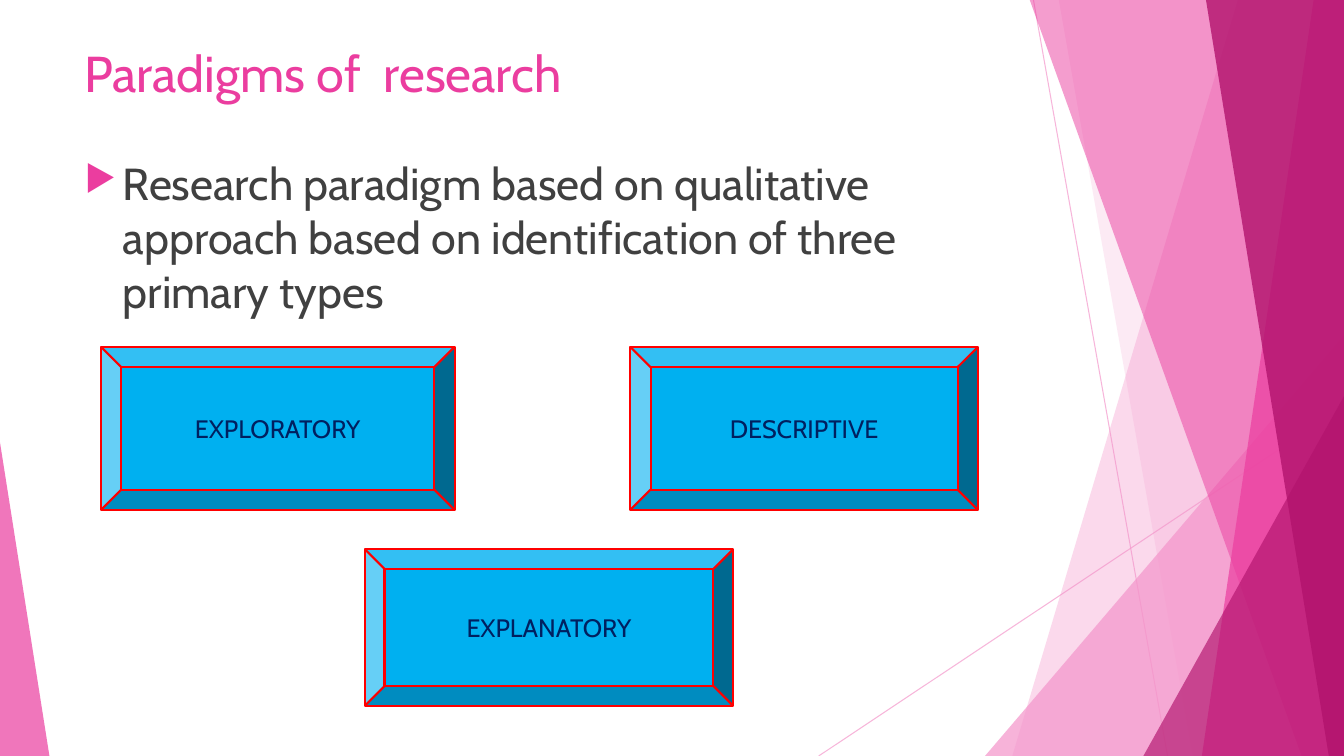
"""Build a slide on the three paradigms of research."""
from dataclasses import dataclass

from lxml.etree import SubElement as Sub
from pptx import Presentation
from pptx.dml.color import RGBColor
from pptx.enum.shapes import MSO_CONNECTOR as Link, MSO_SHAPE as Kind
from pptx.enum.text import MSO_ANCHOR as Anchor, PP_ALIGN as Align
from pptx.oxml.ns import qn
from pptx.util import Inches, Pt

WIDE, HIGH, TOP = 13.33, 7.5, -0.01
ROSE = RGBColor(0xF4, 0x96, 0xCB)
PINK = RGBColor(0xEB, 0x3D, 0x9F)
PLUM = RGBColor(0xB2, 0x13, 0x6D)
GREY = RGBColor(0x40, 0x40, 0x40)
BLUE = RGBColor(0x00, 0xB0, 0xF0)
NAVY = RGBColor(0x00, 0x20, 0x60)
RED = RGBColor(0xFF, 0x00, 0x00)


@dataclass
class Ray:
    """Thin line across the right side."""
    x1: float
    y1: float
    x2: float
    y2: float


@dataclass
class Band:
    """Sheet from a slanted left edge to the right edge of the slide."""
    head: float
    foot: float
    color: RGBColor
    alpha: int


@dataclass
class Wedge:
    """Triangle standing on the bottom edge of the slide."""
    left: float
    width: float
    height: float
    peak: float
    color: RGBColor
    alpha: int


@dataclass
class Tile:
    """Bevelled box that names one paradigm."""
    label: str
    left: float
    top: float
    width: float
    height: float


RAYS = [Ray(10.25, 0, 11.58, HIGH), Ray(WIDE, 4.03, 8.12, HIGH)]
DECOR = [
    Band(12.28, 10.04, ROSE, 36),
    Band(10.5, 11.83, ROSE, 20),
    Wedge(9.77, 3.56, 4.17, 1, ROSE, 72),
    Band(10.21, 12.91, PINK, 50),
    Band(13.03, 11.92, PINK, 70),
    Band(11.96, 13.18, PLUM, 80),
    Wedge(11.34, 1.99, 3.57, 1, PLUM, 66),
    Wedge(0, 0.49, 3.11, 0, PINK, 70),
]
TILES = [
    Tile("EXPLORATORY", 1, 3.44, 3.51, 1.62),
    Tile("DESCRIPTIVE", 6.25, 3.44, 3.45, 1.62),
    Tile("EXPLANATORY", 3.62, 5.45, 3.65, 1.55),
]


def fade(fill, alpha: int) -> None:
    """Make a solid fill see-through."""
    color = next(fill.iter(qn("a:srgbClr")))
    Sub(color, qn("a:alpha"), val=str(alpha * 1000))


def draw_ray(slide, ray: Ray) -> None:
    """Draw one thin line."""
    ends = map(Inches, (ray.x1, ray.y1, ray.x2, ray.y2))
    line = slide.shapes.add_connector(Link.STRAIGHT, *ends)
    line.line.color.rgb = ROSE
    line.line.width = Pt(0.75)
    props = line._element.spPr
    fade(props, 70)
    Sub(props, qn("a:effectLst"))


def draw_decor(slide, item: Band | Wedge) -> None:
    """Draw one translucent sheet or triangle."""
    if isinstance(item, Band):
        pen = slide.shapes.build_freeform(Inches(item.head), Inches(TOP))
        rest = [(WIDE, TOP), (WIDE, HIGH), (item.foot, HIGH)]
        pen.add_line_segments([(Inches(x), Inches(y)) for x, y in rest])
        shape = pen.convert_to_shape()
    else:
        place = (item.left, HIGH - item.height, item.width, item.height)
        shape = slide.shapes.add_shape(
            Kind.ISOSCELES_TRIANGLE, *map(Inches, place))
        shape.adjustments[0] = item.peak
    shape.shadow.inherit = False
    shape.fill.solid()
    shape.fill.fore_color.rgb = item.color
    shape.line.fill.background()
    fade(shape._element.spPr, item.alpha)


def write(shape, text: str, *, size: int, color: RGBColor,
          align=Align.LEFT, anchor=Anchor.TOP, bullet: str = "") -> None:
    """Put one formatted paragraph in a shape."""
    frame = shape.text_frame
    frame.word_wrap = True
    frame.vertical_anchor = anchor
    para = frame.paragraphs[0]
    para.text = text
    para.alignment = align
    if bullet:
        props = para._p.get_or_add_pPr()
        props.set("marL", str(Inches(0.38)))
        props.set("indent", str(Inches(-0.38)))
        Sub(Sub(props, qn("a:buClr")), qn("a:srgbClr"), val=str(PINK))
        Sub(props, qn("a:buSzPct"), val="80000")
        Sub(props, qn("a:buChar"), char=bullet)
    font = para.runs[0].font
    font.name = "Cabin"
    font.size = Pt(size)
    font.color.rgb = color


def draw_tile(slide, tile: Tile) -> None:
    """Draw one bevelled box with its label."""
    place = map(Inches, (tile.left, tile.top, tile.width, tile.height))
    shape = slide.shapes.add_shape(Kind.BEVEL, *place)
    shape.shadow.inherit = False
    shape.fill.solid()
    shape.fill.fore_color.rgb = BLUE
    shape.line.color.rgb = RED
    shape.line.width = Pt(1.5)
    write(shape, tile.label, size=18, color=NAVY,
          align=Align.CENTER, anchor=Anchor.MIDDLE)


def add_box(slide, top: float, height: float):
    """Add a text box in the main column."""
    place = map(Inches, (0.74, top, 9.4, height))
    return slide.shapes.add_textbox(*place)


def main() -> None:
    """Build and save the slide."""
    deck = Presentation()
    deck.slide_width, deck.slide_height = Inches(WIDE), Inches(HIGH)
    slide = deck.slides.add_slide(deck.slide_layouts[6])
    for ray in RAYS:
        draw_ray(slide, ray)
    for item in DECOR:
        draw_decor(slide, item)
    write(add_box(slide, 0.37, 1.03), "Paradigms of  research",
          size=36, color=PINK)
    write(add_box(slide, 1.5, 4.57),
          "Research paradigm based on qualitative approach based on "
          "identification of three primary types",
          size=32, color=GREY, bullet="▶")
    for tile in TILES:
        draw_tile(slide, tile)
    deck.save("out.pptx")


if __name__ == "__main__":
    main()
